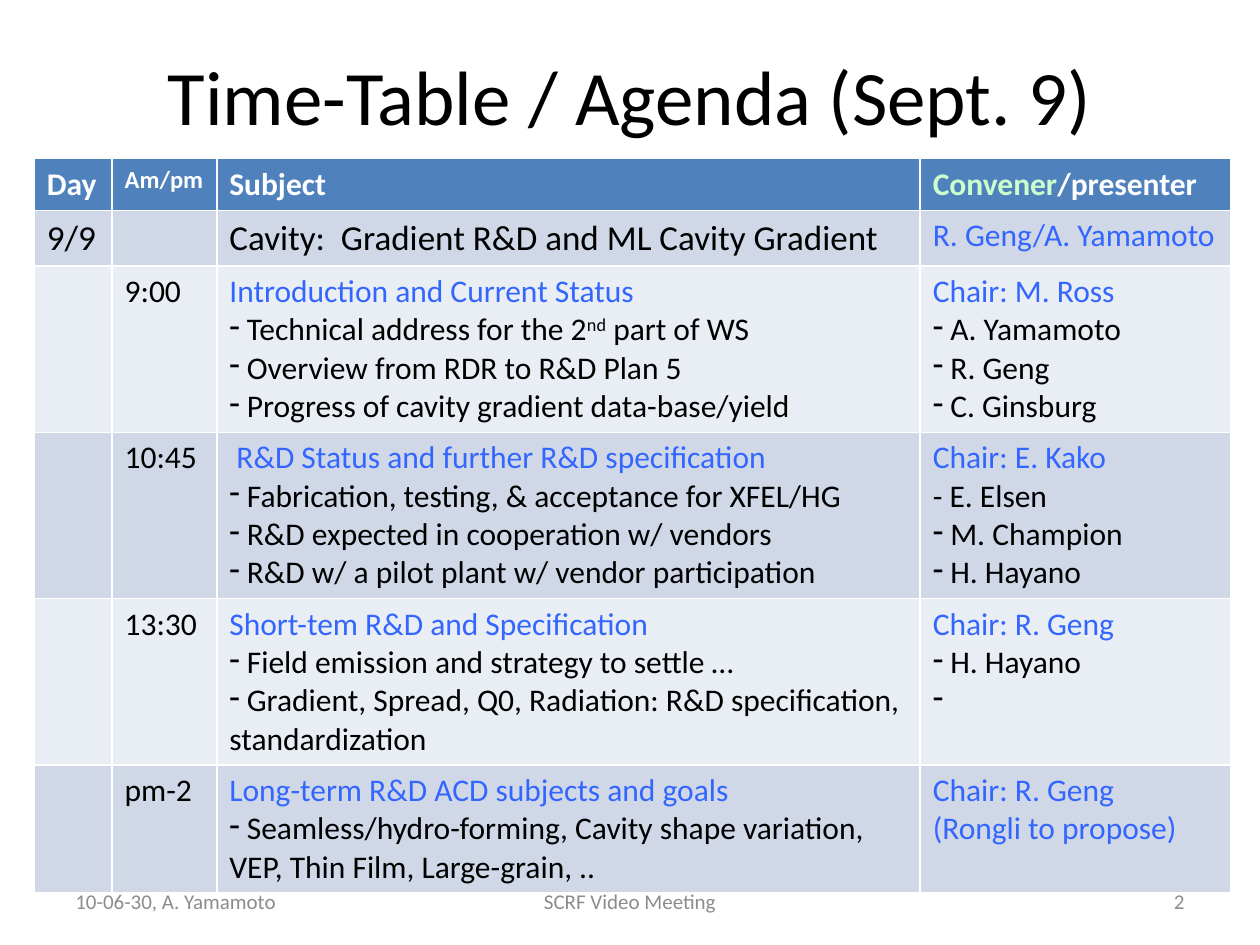
from pptx import Presentation
from pptx import util as u
from pptx.dml.color import RGBColor
from pptx.enum import text
from pptx.oxml.ns import qn
from lxml import etree

BLACK, WHITE, BLUE, GREEN, GREY = "000000", "FFFFFF", "3366FF", "CCFFCC", "8C8C8C"
HEADER_FILL, BANDS = "4F81BD", ("D0D8E8", "E9EDF4")
COLUMN_WIDTHS = (1.57, 2.11, 14.18, 6.27)
ROW_HEIGHTS = (1.04, 1.08, 3.35, 3.35, 3.35, 2.56)


def colour(value):
    return RGBColor.from_string(value)


def add_span(para, words, size=18, ink=BLACK, bold=False, raised=False):
    span = para.add_run()
    span.text = words
    formats = {"name": "Calibri", "size": u.Pt(size), "bold": bold}
    for name, value in formats.items():
        setattr(span.font, name, value)
    span.font.color.rgb = colour(ink)
    if raised:
        span._r.get_or_add_rPr().set("baseline", "30000")


# Each kind of cell line is a list of spans and whether it has a dash bullet
def line(words, **style):
    return [(words, style)], False


def topic(words):
    return line(words, ink=BLUE)


def dash(*parts):
    return [(part, {}) if isinstance(part, str) else part for part in parts], True


def head(words, size=18):
    return line(words, size=size, ink=WHITE, bold=True)


AGENDA = [
    [[head("Day")], [head("Am/pm", 14)], [head("Subject")],
     [([("Convener", {"ink": GREEN, "bold": True}),
        ("/presenter", {"ink": WHITE, "bold": True})], False)]],
    [[line("9/9", size=20)], [],
     [line("Cavity:  Gradient R&D and ML Cavity Gradient", size=20)],
     [topic("R. Geng/A. Yamamoto")]],
    [[], [line("9:00")],
     [topic("Introduction and Current Status"),
      dash(" Technical address for the 2", ("nd", {"raised": True}), " part of WS"),
      dash(" Overview from RDR to R&D Plan 5"),
      dash(" Progress of cavity gradient data-base/yield")],
     [topic("Chair: M. Ross"), dash(" A. Yamamoto"), dash(" R. Geng"), dash(" C. Ginsburg")]],
    [[], [line("10:45")],
     [topic(" R&D Status and further R&D specification"),
      dash(" Fabrication, testing, & acceptance for XFEL/HG"),
      dash(" R&D expected in cooperation w/ vendors"),
      dash(" R&D w/ a pilot plant w/ vendor participation")],
     [topic("Chair: E. Kako"), line("- E. Elsen"), dash(" M. Champion"), dash(" H. Hayano")]],
    [[], [line("13:30")],
     [topic("Short-tem R&D and Specification"),
      dash(" Field emission and strategy to settle …"),
      dash(" Gradient, Spread, Q0, Radiation: R&D specification, standardization")],
     [topic("Chair: R. Geng"), dash(" H. Hayano"), dash(" ")]],
    [[], [line("pm-2")],
     [topic("Long-term R&D ACD subjects and goals"),
      dash(" Seamless/hydro-forming, Cavity shape variation, VEP, Thin Film, Large-grain, ..")],
     [topic("Chair: R. Geng"), topic("(Rongli to propose)")]],
]


def add_dash_bullet(para):
    properties = para._p.get_or_add_pPr()
    properties.set("marL", "0")
    properties.set("indent", "0")
    etree.SubElement(properties, qn("a:buChar")).set("char", "-")


def fill_cell(cell, lines, fill):
    cell.fill.solid()
    cell.fill.fore_color.rgb = colour(fill)
    frame = cell.text_frame
    for index, (spans, bulleted) in enumerate(lines):
        para = frame.add_paragraph() if index else frame.paragraphs[0]
        if bulleted:
            add_dash_bullet(para)
        for words, style in spans:
            add_span(para, words, **style)


def place_title(page, box):
    title = page.shapes.title
    for name, value in zip(("left", "top", "width", "height"), box):
        setattr(title, name, u.Cm(value))
    title.text_frame.vertical_anchor = text.MSO_ANCHOR.MIDDLE
    para = title.text_frame.paragraphs[0]
    para.alignment = text.PP_ALIGN.CENTER
    add_span(para, "Time-Table / Agenda (Sept. 9)", size=44)


def add_agenda(page, left, top):
    # The default table style supplies the white rules between cells
    table = page.shapes.add_table(
        len(AGENDA), len(COLUMN_WIDTHS), u.Cm(left), u.Cm(top),
        u.Cm(sum(COLUMN_WIDTHS)), u.Cm(sum(ROW_HEIGHTS))).table
    for column, width in zip(table.columns, COLUMN_WIDTHS):
        column.width = u.Cm(width)
    for index, (row, height, entries) in enumerate(zip(table.rows, ROW_HEIGHTS, AGENDA)):
        row.height = u.Cm(height)
        fill = BANDS[(index - 1) % 2] if index else HEADER_FILL
        for cell, lines in zip(row.cells, entries):
            fill_cell(cell, lines, fill)


def add_footer(page, left, top, width, height):
    align = text.PP_ALIGN
    side, middle = 5.93, 8.04
    parts = [
        ("10-06-30, A. Yamamoto", left, side, align.LEFT),
        ("SCRF Video Meeting", left + (width - middle) / 2, middle, align.CENTER),
        ("2", left + width - side, side, align.RIGHT),
    ]
    for words, x, part_width, alignment in parts:
        box = page.shapes.add_textbox(u.Cm(x), u.Cm(top), u.Cm(part_width), u.Cm(height))
        frame = box.text_frame
        frame.word_wrap = True
        frame.vertical_anchor = text.MSO_ANCHOR.MIDDLE
        frame.paragraphs[0].alignment = alignment
        add_span(frame.paragraphs[0], words, size=12, ink=GREY)


def main():
    deck = Presentation()
    deck.slide_width, deck.slide_height = u.Cm(25.4), u.Cm(19.05)
    page = deck.slides.add_slide(deck.slide_layouts[5])
    place_title(page, (1.27, 0.76, 22.86, 2.31))
    add_agenda(page, 0.69, 3.2)
    add_footer(page, 1.27, 17.65, 22.86, 1.02)
    deck.save("out.pptx")


if __name__ == "__main__":
    main()
